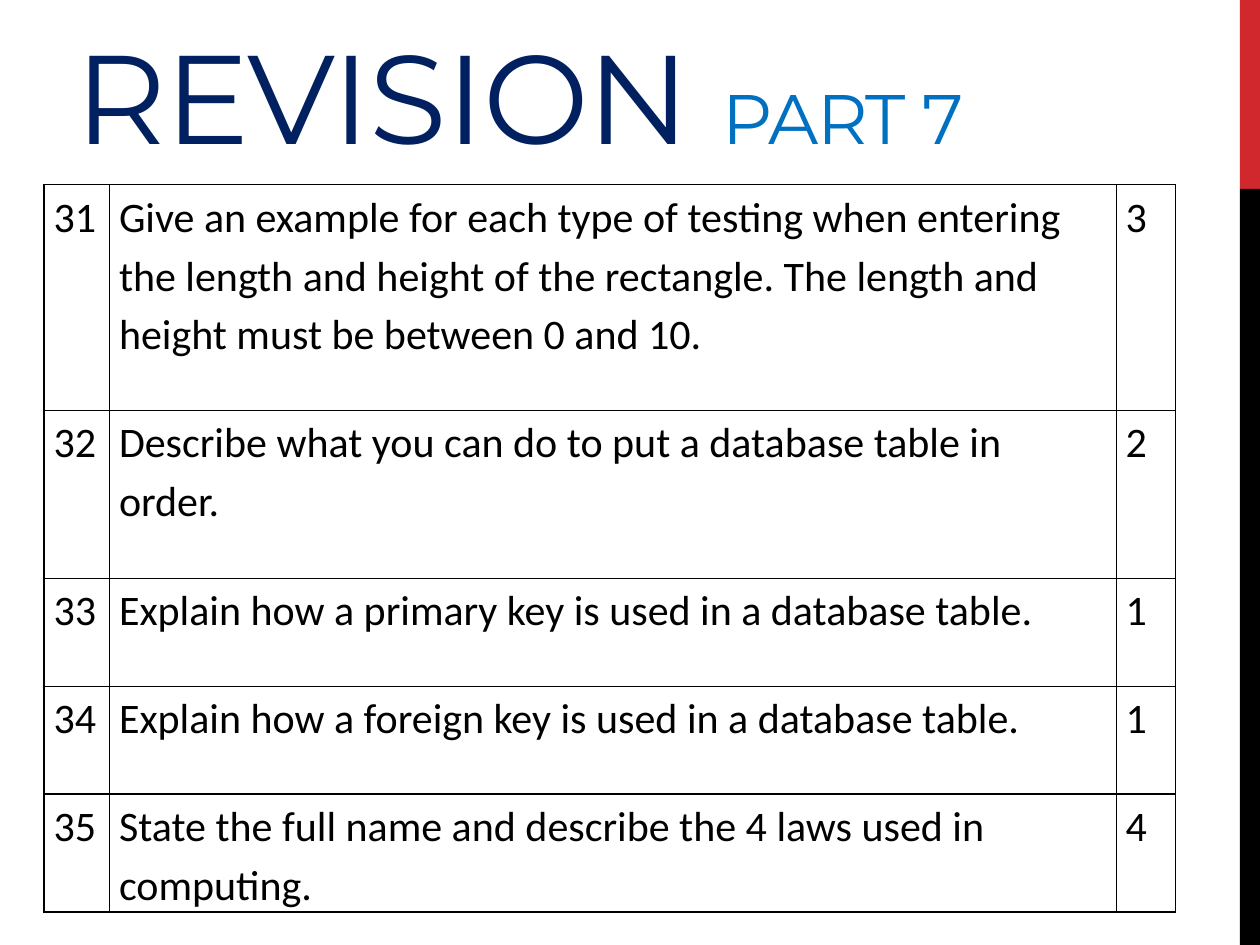
from lxml import etree
from pptx import Presentation
from pptx.dml.color import RGBColor
from pptx.enum.shapes import MSO_SHAPE
from pptx.enum.text import MSO_ANCHOR
from pptx.oxml.ns import qn
from pptx.util import Pt

RECT = MSO_SHAPE.RECTANGLE
BOTTOM = MSO_ANCHOR.BOTTOM
BLACK, RED, NAVY, BLUE = "000000", "D1282E", "002060", "0070C0"
COLS = [37.44, 575.28, 33.84]
ROWS = [
    (129, "31", "Give an example for each type of testing when entering the length and "
                "height of the rectangle. The length and height must be between 0 and 10.", "3"),
    (96, "32", "Describe what you can do to put a database table in order.", "2"),
    (61.7, "33", "Explain how a primary key is used in a database table.", "1"),
    (61.7, "34", "Explain how a foreign key is used in a database table.", "1"),
    (67.4, "35", "State the full name and describe the 4 laws used in computing.", "4"),
]


def tint(code):
    return RGBColor.from_string(code)


def apply(item, values):
    for name, value in values.items():
        setattr(item, name, value)


class Deck:
    """Holds the style and the current slide."""

    head = {"name": "Montserrat"}
    body = {"name": "Calibri", "size": Pt(24)}
    frame = {"word_wrap": True, "vertical_anchor": BOTTOM, "margin_top": 0, "margin_bottom": 0}
    inset = {"margin_left": Pt(5.4), "margin_right": Pt(5.4), "margin_top": 0, "margin_bottom": 0}

    def __init__(self, wide, high):
        self.show = Presentation()
        apply(self.show, {"slide_width": Pt(wide), "slide_height": Pt(high)})
        self.slide = self.show.slides.add_slide(self.show.slide_layouts[6])

    def bar(self, box, code):
        shape = self.slide.shapes.add_shape(RECT, *map(Pt, box))
        shape.shadow.inherit = False
        shape.fill.solid()
        shape.fill.fore_color.rgb = tint(code)
        shape.line.fill.background()

    def label(self, para, text, style, code):
        run = para.add_run()
        run.text = text
        apply(run.font, style)
        run.font.color.rgb = tint(code)
        return run

    def title(self, box, parts):
        frame = self.slide.shapes.add_textbox(*map(Pt, box)).text_frame
        apply(frame, self.frame)
        for text, size, code in parts:
            style = {**self.head, "size": Pt(size)}
            run = self.label(frame.paragraphs[0], text, style, code)
            run._r.get_or_add_rPr().set("spc", "-60")

    def border(self, cell, code):
        props = cell._tc.get_or_add_tcPr()
        for side in ("a:lnL", "a:lnR", "a:lnT", "a:lnB"):
            line = etree.SubElement(props, qn(side), w=str(Pt(1)))
            fill = etree.SubElement(line, qn("a:solidFill"))
            etree.SubElement(fill, qn("a:srgbClr"), val=code)

    def table(self, left, top, cols, rows):
        size = sum(cols), sum(row[0] for row in rows)
        grid = self.slide.shapes.add_table(
            len(rows), len(cols), Pt(left), Pt(top), *map(Pt, size)).table
        apply(grid, {"first_row": False, "horz_banding": False})
        for col, width in zip(grid.columns, cols):
            col.width = Pt(width)
        for row, (height, *texts) in zip(grid.rows, rows):
            row.height = Pt(height)
            for cell, text in zip(row.cells, texts):
                apply(cell, self.inset)
                self.border(cell, BLACK)
                cell.fill.background()
                para = cell.text_frame.paragraphs[0]
                para.line_spacing = 1.15
                self.label(para, text, self.body, BLACK)


def main():
    deck = Deck(720, 540)
    deck.bar((708.5, 0, 11.5, 108), RED)
    deck.bar((708.5, 108, 11.5, 432), BLACK)
    deck.title((36, 3.6, 618.5, 93.6), [("REVISION ", 72, NAVY), ("PART 7", 40, BLUE)])
    deck.table(25.2, 105.5, COLS, ROWS)
    deck.show.save("out.pptx")


if __name__ == "__main__":
    main()
